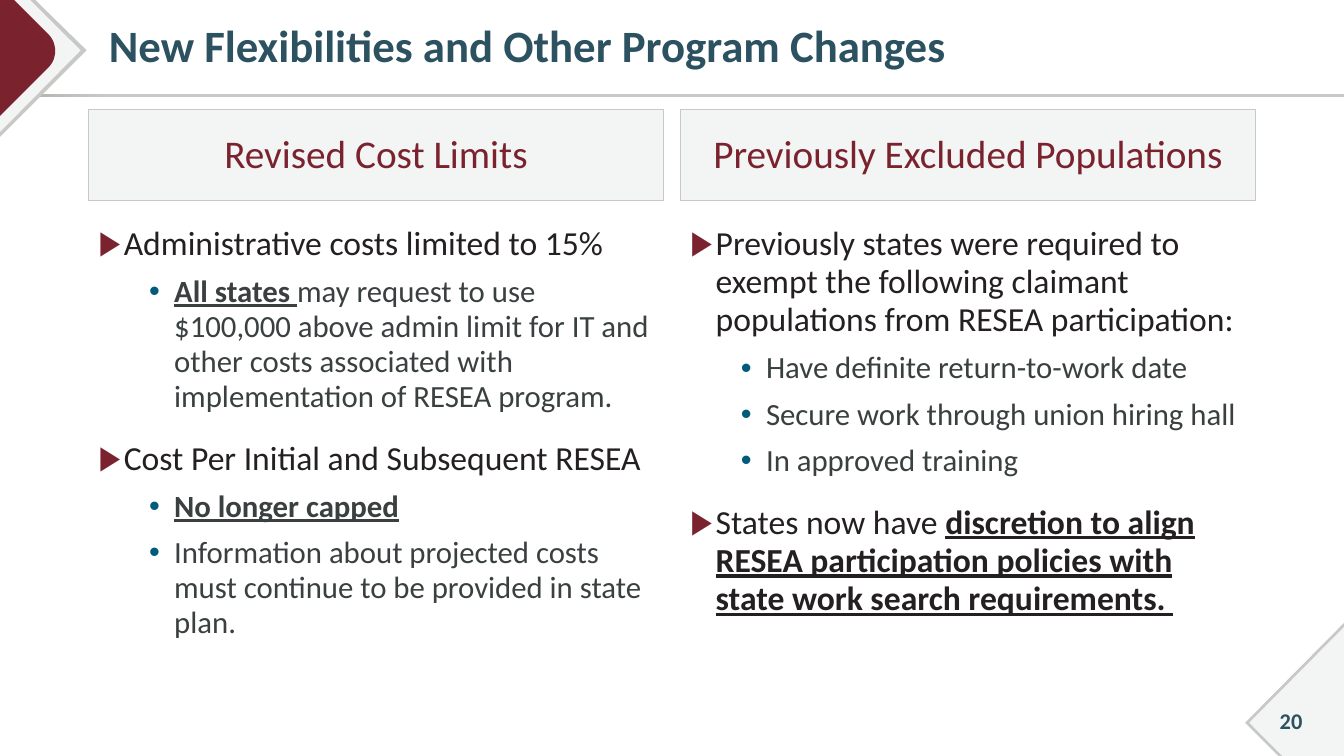
import pptx
import pptx.util
import pptx.dml.color
import pptx.enum.dml
import pptx.enum.shapes
import pptx.enum.text
import pptx.oxml
import pptx.oxml.ns
from lxml import etree
from pptx.util import Inches

THEME = {
    "font": "Calibri",
    "teal": "2C5261", "maroon": "7A232F", "blue": "005A7C",
    "ink": "242021", "soft_ink": "3A4040",
    "silver": "C8C8C6", "dark_silver": "ABABA8", "pale": "F3F4F4",
    "title": 32, "heading": 28, "number": 16,
}
# Per outline level: size, text colour, left indent, space before, bullet, bullet colour
LEVELS = [
    (24, "ink", 0.25, 18, "▶", "maroon"),
    (22, "soft_ink", 0.75, 8, "•", "blue"),
]
RGB = pptx.dml.color.RGBColor.from_string
ANCHOR = pptx.enum.text.MSO_ANCHOR
ALIGN = pptx.enum.text.PP_ALIGN
RECTANGLE = pptx.enum.shapes.MSO_SHAPE.RECTANGLE


def style_span(span, size, color, bold=False, underline=False):
    span.font.name = THEME["font"]
    span.font.size = pptx.util.Pt(size)
    span.font.color.rgb = RGB(THEME[color])
    span.font.bold = bold
    span.font.underline = underline


def set_line(frame, text, size, color, align, bold=False):
    frame.text = text
    frame.word_wrap = True
    frame.vertical_anchor = ANCHOR.MIDDLE
    frame.paragraphs[0].alignment = align
    style_span(frame.paragraphs[0].runs[0], size, color, bold)


deck = pptx.Presentation()
deck.slide_width, deck.slide_height = Inches(13.33), Inches(7.5)
page = deck.slides.add_slide(deck.slide_layouts[5])

# Rule under the title
rule = page.shapes.add_shape(RECTANGLE, 0, Inches(0.93), Inches(13.33), Inches(0.03))
rule.shadow.inherit = False
rule.line.fill.background()
rule.fill.gradient()
rule.fill.gradient_angle = 0
for stop, position, color in zip(rule.fill.gradient_stops, (0, 0.08), ("dark_silver", "silver")):
    stop.position = position
    stop.color.rgb = RGB(THEME[color])

# Corner ornaments, with the maroon tip rounded along a Bezier curve
bend = [(0.48, 0.34), (0.57, 0.43), (0.57, 0.58), (0.48, 0.67)]
rounded_tip = []
for step in range(13):
    t = step / 12
    weights = ((1 - t) ** 3, 3 * t * (1 - t) ** 2, 3 * t ** 2 * (1 - t), t ** 3)
    rounded_tip.append(tuple(sum(w * point[axis] for w, point in zip(weights, bend))
                             for axis in (0, 1)))
ornaments = [
    ("silver", [(13.33, 6.18), (13.33, 7.5), (12.68, 7.5), (12.35, 7.17)]),
    ("pale", [(13.33, 6.22), (13.33, 7.5), (12.72, 7.5), (12.39, 7.17)]),
    ("silver", [(0, 0), (0.35, 0), (0.86, 0.5), (0, 1.36)]),
    ("pale", [(0, 0), (0.3, 0), (0.8, 0.5), (0, 1.31)]),
    ("maroon", [(0, 0), (0.14, 0), *rounded_tip, (0, 1.15)]),
]
for color, outline in ornaments:
    points = [(Inches(x), Inches(y)) for x, y in outline]
    builder = page.shapes.build_freeform(*points[0])
    builder.add_line_segments(points[1:], close=True)
    ornament = builder.convert_to_shape()
    ornament.shadow.inherit = False
    ornament.fill.solid()
    ornament.fill.fore_color.rgb = RGB(THEME[color])
    ornament.line.fill.background()

# Title
title = page.shapes.title
title.left, title.top = Inches(0.88), Inches(0.05)
title.width, title.height = Inches(12.12), Inches(0.86)
set_line(title.text_frame, "New Flexibilities and Other Program Changes",
         THEME["title"], "teal", ALIGN.LEFT, bold=True)
title.text_frame.auto_size = pptx.enum.text.MSO_AUTO_SIZE.NONE
title.text_frame.margin_left = Inches(0.2)
title.text_frame.paragraphs[0].line_spacing = 0.9

# Slide number
number = page.shapes.add_textbox(Inches(12.45), Inches(6.95), Inches(0.71), Inches(0.4))
set_line(number.text_frame, "20", THEME["number"], "teal", ALIGN.CENTER, bold=True)

# Two columns: heading and (level, [(text, emphasised)]) paragraphs
columns = [
    ("Revised Cost Limits", [
        (0, [("Administrative costs limited to 15%", False)]),
        (1, [("All states ", True),
             ("may request to use $100,000 above admin limit for IT and other costs "
              "associated with implementation of RESEA program.", False)]),
        (0, [("Cost Per Initial and Subsequent RESEA", False)]),
        (1, [("No longer capped", True)]),
        (1, [("Information about projected costs must continue to be provided "
              "in state plan.", False)]),
    ]),
    ("Previously Excluded Populations", [
        (0, [("Previously states were required to exempt the following claimant "
              "populations from RESEA participation:", False)]),
        (1, [("Have definite return-to-work date", False)]),
        (1, [("Secure work through union hiring hall", False)]),
        (1, [("In approved training", False)]),
        (0, [("States now have ", False),
             ("discretion to align RESEA participation policies with state work "
              "search requirements. ", True)]),
    ]),
]
for column, (heading, items) in enumerate(columns):
    left = Inches(0.88 + 5.87 * column)

    header = page.shapes.add_shape(RECTANGLE, left, Inches(1.09), Inches(5.7), Inches(0.9))
    header.shadow.inherit = False
    header.fill.solid()
    header.fill.fore_color.rgb = RGB(THEME["pale"])
    header.line.color.rgb = RGB(THEME["silver"])
    header.line.width = pptx.util.Pt(0.75)
    set_line(header.text_frame, heading, THEME["heading"], "maroon", ALIGN.CENTER)
    header.text_frame.paragraphs[0].line_spacing = 0.95

    box = page.shapes.add_textbox(left, Inches(2.18), Inches(5.7), Inches(4.59))
    box.text_frame.word_wrap = True
    for index, (level, spans) in enumerate(items):
        size, color, indent, gap, bullet, bullet_color = LEVELS[level]
        para = box.text_frame.add_paragraph() if index else box.text_frame.paragraphs[0]
        para.level = level

        # Hanging bullet
        properties = para._p.get_or_add_pPr()
        properties.set("marL", str(Inches(indent)))
        properties.set("indent", str(Inches(-0.25)))
        tint = etree.SubElement(properties, pptx.oxml.ns.qn("a:buClr"))
        etree.SubElement(tint, pptx.oxml.ns.qn("a:srgbClr"), val=THEME[bullet_color])
        etree.SubElement(properties, pptx.oxml.ns.qn("a:buFont"), typeface="Arial")
        etree.SubElement(properties, pptx.oxml.ns.qn("a:buChar"), char=bullet)

        para.line_spacing = 0.95
        para.space_before = pptx.util.Pt(gap if index else 0)
        for text, emphasised in spans:
            span = para.add_run()
            span.text = text
            style_span(span, size, color, emphasised, emphasised)

deck.save("out.pptx")
